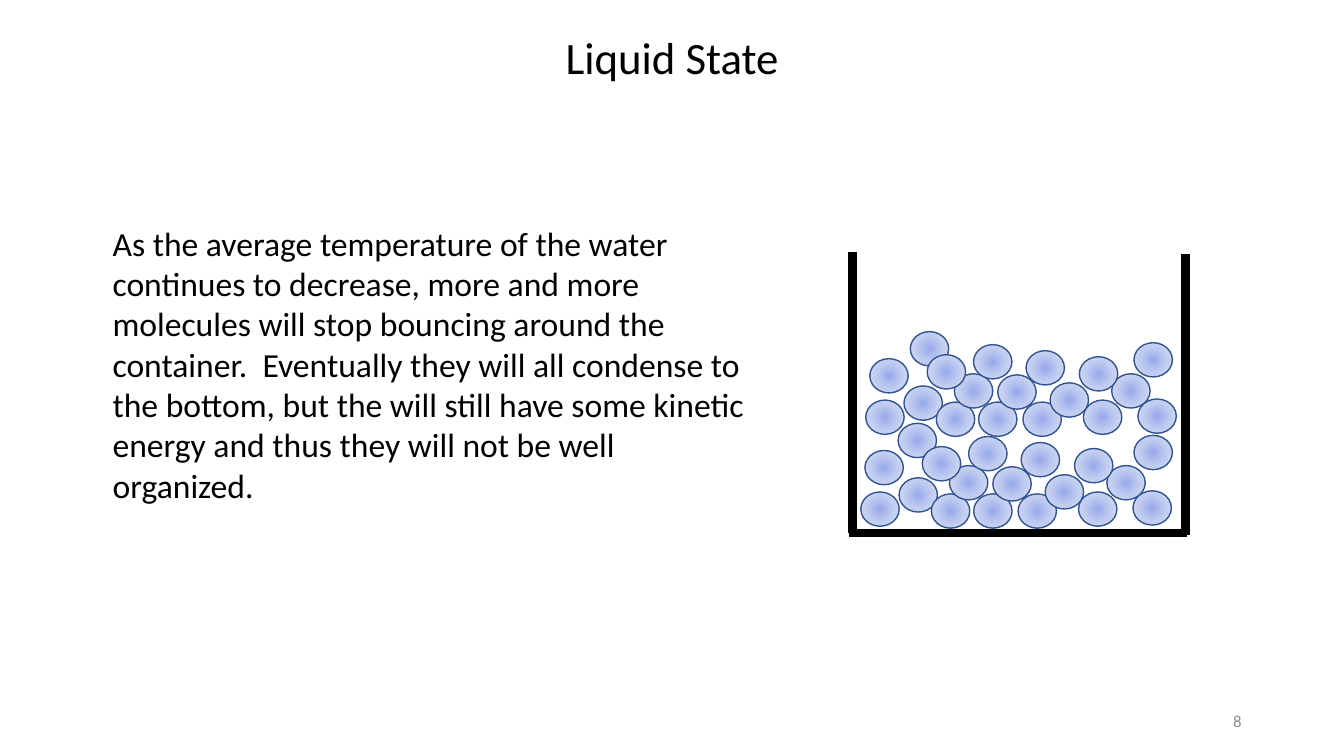
from pptx import Presentation
from pptx.dml.color import RGBColor
from pptx.enum.shapes import MSO_CONNECTOR, MSO_SHAPE
from pptx.enum.text import MSO_ANCHOR, PP_ALIGN
from pptx.oxml import parse_xml
from pptx.oxml.ns import nsdecls
from pptx.oxml.xmlchemy import OxmlElement
from pptx.util import Pt

COLORS = {
    "text": "000000",
    "number": "8C8C8C",
    "wall": "000000",
    "outline": "325491",
    "core": "96ABEA",
    "middle": "C0CBF0",
    "rim": "E0E5F7",
}
GLOW = [(0, "core"), (50, "middle"), (100, "rim")]

WALLS = [
    (609.1, 180, 609.1, 380.9),
    (606.2, 380.9, 848.2, 380.9),
    (846.7, 181.4, 846.7, 382.3),
]

MOLECULE_SIZE = (27.4, 24.5)
LAYER = [
    (614.9, 351.4), (642.2, 341.3), (665.3, 352.8), (695.5, 352.8),
    (678.2, 332.6), (727.2, 352.8), (770.4, 351.4), (809.3, 350.6),
    (790.6, 332.6), (617.8, 321.8), (658.8, 319), (709.2, 333.4),
    (691.9, 311.8), (746.6, 339.1), (729.4, 316.1), (767.5, 320.4),
]
LAYERS = [
    ((0, 0), [(641.5, 302.4), (810, 311)]),
    ((3.5, -65.6), [(650.2, 236.9), (810, 244.8)]),
]

BODY = (
    "As the average temperature of the water continues to decrease, more and "
    "more molecules will stop bouncing around the container.  Eventually they "
    "will all condense to the bottom, but the will still have some kinetic "
    "energy and thus they will not be well organized."
)


class SlideBuilder:
    font = "Calibri"

    def __init__(self, slide):
        self.slide = slide

    def color(self, name):
        return RGBColor.from_string(COLORS[name])

    def text(self, text, x, y, w, h, size, color="text",
             align=PP_ALIGN.LEFT, anchor=MSO_ANCHOR.TOP):
        tf = self.slide.shapes.add_textbox(Pt(x), Pt(y), Pt(w), Pt(h)).text_frame
        tf.word_wrap = True
        tf.vertical_anchor = anchor
        p = tf.paragraphs[0]
        p.alignment = align
        r = p.add_run()
        r.text = text
        r.font.name = self.font
        r.font.size = Pt(size)
        r.font.color.rgb = self.color(color)

    def wall(self, x1, y1, x2, y2):
        line = self.slide.shapes.add_connector(
            MSO_CONNECTOR.STRAIGHT, Pt(x1), Pt(y1), Pt(x2), Pt(y2))
        line.line.color.rgb = self.color("wall")
        line.line.width = Pt(6)
        line._element.spPr.append(OxmlElement("a:effectLst"))

    def molecule(self, x, y):
        w, h = MOLECULE_SIZE
        sp = self.slide.shapes.add_shape(
            MSO_SHAPE.OVAL, Pt(x), Pt(y), Pt(w), Pt(h))
        stops = "".join(
            f'<a:gs pos="{pos * 1000}"><a:srgbClr val="{COLORS[name]}"/></a:gs>'
            for pos, name in GLOW)
        sp._element.spPr.insert(2, parse_xml(
            f'<a:gradFill {nsdecls("a")}><a:gsLst>{stops}</a:gsLst>'
            '<a:path path="circle"><a:fillToRect l="50000" t="50000" '
            'r="50000" b="50000"/></a:path></a:gradFill>'))
        sp.line.color.rgb = self.color("outline")
        sp.line.width = Pt(1)
        sp.shadow.inherit = False


def main():
    prs = Presentation()
    prs.slide_width, prs.slide_height = Pt(960), Pt(540)
    s = SlideBuilder(prs.slides.add_slide(prs.slide_layouts[6]))

    s.text("Liquid State", 239, 18, 482.4, 46, 32, align=PP_ALIGN.CENTER)
    for wall in WALLS:
        s.wall(*wall)
    for (dx, dy), loose in LAYERS:
        for x, y in loose + [(x + dx, y + dy) for x, y in LAYER]:
            s.molecule(x, y)
    s.text(BODY, 73.4, 155.5, 465.1, 211, 24)
    s.text("8", 678, 500.5, 216, 28.8, 12, "number",
           PP_ALIGN.RIGHT, MSO_ANCHOR.MIDDLE)

    prs.save("out.pptx")


if __name__ == "__main__":
    main()
